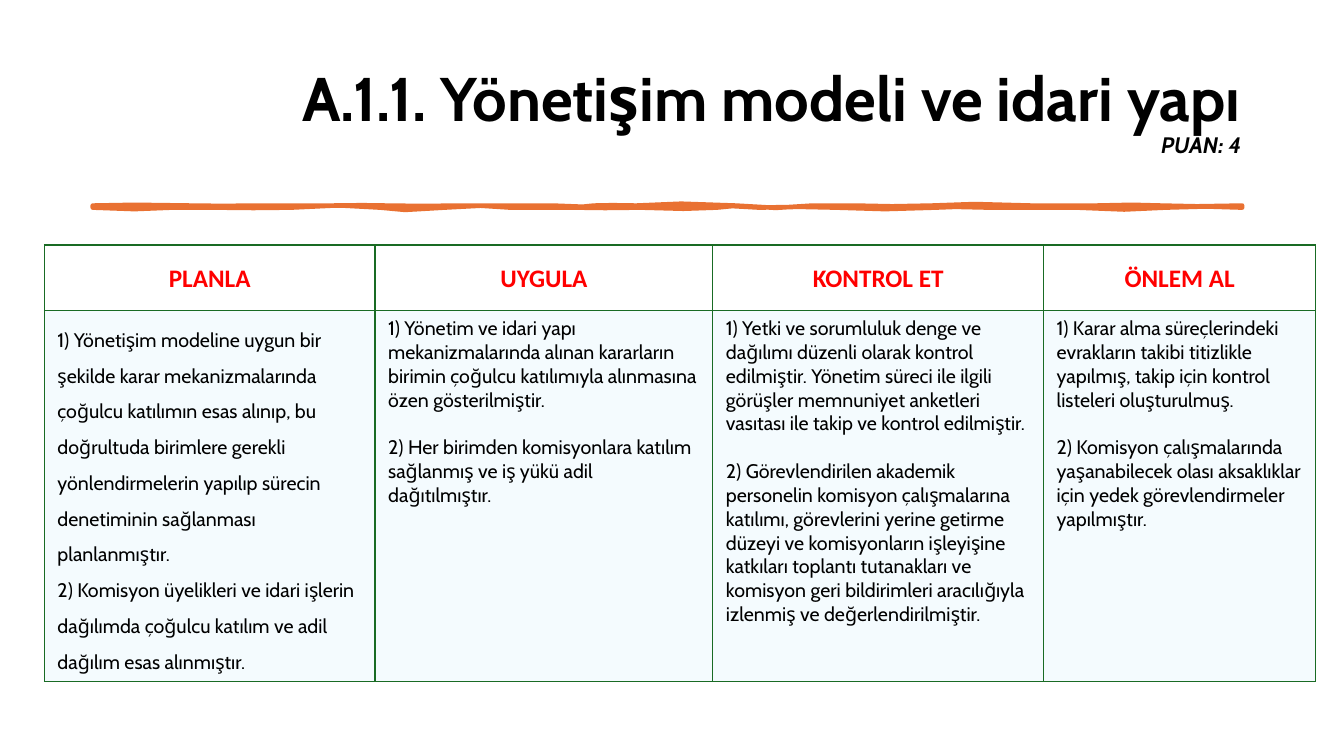
from dataclasses import dataclass

from lxml.etree import SubElement
from pptx import Presentation
from pptx.dml.color import RGBColor
from pptx.enum.text import MSO_ANCHOR, PP_ALIGN
from pptx.oxml.ns import qn
from pptx.util import Pt

# Content
TITLE = "A.1.1. Yönetişim modeli ve idari yapı"
SCORE = "PUAN: 4"
STAGES = [
    ("PLANLA", [
        "1) Yönetişim modeline uygun bir şekilde karar mekanizmalarında çoğulcu katılımın esas alınıp, "
        "bu doğrultuda birimlere gerekli yönlendirmelerin yapılıp sürecin denetiminin sağlanması "
        "planlanmıştır.",
        "2) Komisyon üyelikleri ve idari işlerin dağılımda çoğulcu katılım ve adil dağılım esas "
        "alınmıştır."]),
    ("UYGULA", [
        "1) Yönetim ve idari yapı mekanizmalarında alınan kararların birimin çoğulcu katılımıyla "
        "alınmasına özen gösterilmiştir.",
        "2) Her birimden komisyonlara katılım sağlanmış ve iş yükü adil dağıtılmıştır."]),
    ("KONTROL ET", [
        "1) Yetki ve sorumluluk denge ve dağılımı düzenli olarak kontrol edilmiştir. Yönetim süreci "
        "ile ilgili görüşler memnuniyet anketleri vasıtası ile takip ve kontrol edilmiştir.",
        "2) Görevlendirilen akademik personelin komisyon çalışmalarına katılımı, görevlerini yerine "
        "getirme düzeyi ve komisyonların işleyişine katkıları toplantı tutanakları ve komisyon geri "
        "bildirimleri aracılığıyla izlenmiş ve değerlendirilmiştir."]),
    ("ÖNLEM AL", [
        "1) Karar alma süreçlerindeki evrakların takibi titizlikle yapılmış, takip için kontrol "
        "listeleri oluşturulmuş.",
        "2) Komisyon çalışmalarında yaşanabilecek olası aksaklıklar için yedek görevlendirmeler "
        "yapılmıştır."]),
]

# Layout in px, 100 to the inch
PX = 9144
SLIDE = (1333, 750)
TITLE_BOX = (91, 40, 1150, 145)
TABLE_LEFT, TABLE_TOP = 44, 243
COLUMNS = (328, 335, 328, 270)
ROWS = (65, 368)
HEADER_INSETS = (5, 0, 5, 0)
BODY_INSETS = (13, 6, 13, 6)

# Brush stroke: each wave is (control x, control y, control x, control y, end x)
STROKE_LEFT, STROKE_TOP, STROKE_BOTTOM = 92, 204, 206
TOP_WAVES = [
    (119, 204, 144, 202, 190), (237, 206, 220, 203, 244), (267, 205, 303, 203, 331),
    (360, 205, 359, 202, 384), (410, 206, 423, 203, 460), (498, 205, 514, 203, 548),
    (581, 205, 581, 206, 589), (598, 202, 615, 205, 631), (647, 203, 701, 200, 730),
    (759, 208, 781, 206, 806), (831, 202, 827, 206, 848), (868, 202, 901, 208, 924),
    (947, 200, 982, 204, 1023), (1063, 204, 1063, 204, 1087), (1112, 204, 1136, 202, 1152),
    (1168, 206, 1203, 204, 1232),
]
BOTTOM_WAVES = [
    (1205, 206, 1189, 203, 1156), (1122, 209, 1110, 208, 1068), (1027, 204, 1023, 208, 981),
    (939, 204, 952, 206, 928), (904, 206, 851, 210, 829), (806, 202, 782, 208, 753),
    (724, 204, 725, 204, 711), (698, 208, 661, 207, 635), (609, 205, 590, 208, 570),
    (551, 204, 528, 208, 506), (483, 204, 473, 203, 441), (409, 209, 390, 209, 377),
    (363, 203, 310, 203, 289), (268, 209, 235, 204, 213), (192, 208, 189, 204, 171),
    (154, 208, 114, 208, 92),
]
STEPS = 2


@dataclass(frozen=True)
class Theme:
    text_font: str = "Cabin"
    header_font: str = "Calibri"
    text: str = "000000"
    header: str = "FF0000"
    stroke: str = "E97132"
    border: str = "196B24"
    cell: str = "CAEEFB"
    cell_opacity: int = 20
    title_size: int = 44
    score_size: int = 16
    header_size: int = 18
    body_size: int = 14
    stroke_width: float = 3.25
    border_width: int = 1
    item_gap: int = 17


THEME = Theme()


def px(*lengths):
    return [length * PX for length in lengths]


def add_run(paragraph, text, font, size, color, bold=False, italic=False):
    run = paragraph.add_run()
    run.text = text
    run.font.name = font
    run.font.size = Pt(size)
    run.font.bold = bold
    run.font.italic = italic
    run.font.color.rgb = RGBColor.from_string(color)


def add_title(slide):
    frame = slide.shapes.add_textbox(*px(*TITLE_BOX)).text_frame
    frame.word_wrap = True
    frame.vertical_anchor = MSO_ANCHOR.MIDDLE
    paragraph = frame.paragraphs[0]
    paragraph.alignment = PP_ALIGN.RIGHT
    paragraph.line_spacing = 0.9
    add_run(paragraph, TITLE, THEME.text_font, THEME.title_size, THEME.text, bold=True)
    paragraph.add_line_break()
    add_run(paragraph, SCORE, THEME.text_font, THEME.score_size, THEME.text, bold=True, italic=True)


def wave_points(start, level, waves):
    points = []
    for x1, y1, x2, y2, end in waves:
        for step in range(1, STEPS + 1):
            t = step / STEPS
            weights = ((1 - t) ** 3, 3 * t * (1 - t) ** 2, 3 * t * t * (1 - t), t ** 3)
            x = sum(w * v for w, v in zip(weights, (start, x1, x2, end)))
            y = sum(w * v for w, v in zip(weights, (level, y1, y2, level)))
            points.append((round(x * PX), round(y * PX)))
        start = end
    return points


def add_stroke(slide):
    right = TOP_WAVES[-1][-1]
    builder = slide.shapes.build_freeform(*px(STROKE_LEFT, STROKE_TOP))
    builder.add_line_segments(
        wave_points(STROKE_LEFT, STROKE_TOP, TOP_WAVES)
        + [tuple(px(right, STROKE_BOTTOM))]
        + wave_points(right, STROKE_BOTTOM, BOTTOM_WAVES), close=True)
    shape = builder.convert_to_shape()
    shape.shadow.inherit = False
    shape.fill.solid()
    shape.fill.fore_color.rgb = RGBColor.from_string(THEME.stroke)
    shape.line.color.rgb = RGBColor.from_string(THEME.stroke)
    shape.line.width = Pt(THEME.stroke_width)


def set_borders(cell):
    properties = cell._tc.get_or_add_tcPr()
    for tag in ("a:lnL", "a:lnR", "a:lnT", "a:lnB"):
        line = SubElement(properties, qn(tag), w=str(Pt(THEME.border_width)))
        SubElement(SubElement(line, qn("a:solidFill")), qn("a:srgbClr"), val=THEME.border)


def set_insets(cell, insets):
    cell.margin_left, cell.margin_top, cell.margin_right, cell.margin_bottom = px(*insets)


def fill_header(cell, heading):
    set_insets(cell, HEADER_INSETS)
    set_borders(cell)
    cell.fill.background()
    cell.vertical_anchor = MSO_ANCHOR.MIDDLE
    paragraph = cell.text_frame.paragraphs[0]
    paragraph.alignment = PP_ALIGN.CENTER
    paragraph.line_spacing = 1.07
    paragraph.space_after = Pt(8)
    add_run(paragraph, heading, THEME.header_font, THEME.header_size, THEME.header, bold=True)


def fill_body(cell, items, line_spacing, gap):
    set_insets(cell, BODY_INSETS)
    set_borders(cell)
    cell.fill.solid()
    cell.fill.fore_color.rgb = RGBColor.from_string(THEME.cell)
    color = cell._tc.tcPr.find(qn("a:solidFill")).find(qn("a:srgbClr"))
    SubElement(color, qn("a:alpha"), val=str(THEME.cell_opacity * 1000))
    frame = cell.text_frame
    for index, item in enumerate(items):
        paragraph = frame.add_paragraph() if index else frame.paragraphs[0]
        paragraph.line_spacing = line_spacing
        paragraph.space_before = Pt(gap if index else 0)
        add_run(paragraph, item, THEME.text_font, THEME.body_size, THEME.text)


def add_stage_table(slide):
    frame = slide.shapes.add_table(
        len(ROWS), len(COLUMNS), *px(TABLE_LEFT, TABLE_TOP, sum(COLUMNS), sum(ROWS)))
    table = frame.table
    table.first_row = table.horz_banding = False
    for row, height in zip(table.rows, ROWS):
        row.height = height * PX
    for index, (heading, items) in enumerate(STAGES):
        table.columns[index].width = COLUMNS[index] * PX
        fill_header(table.cell(0, index), heading)
        # The first stage is set in open lines, the others with a gap between items
        line_spacing, gap = (1.0, THEME.item_gap) if index else (1.5, 0)
        fill_body(table.cell(1, index), items, line_spacing, gap)


def main():
    presentation = Presentation()
    presentation.slide_width, presentation.slide_height = px(*SLIDE)
    slide = presentation.slides.add_slide(presentation.slide_layouts[6])
    add_title(slide)
    add_stroke(slide)
    add_stage_table(slide)
    presentation.save("out.pptx")


if __name__ == "__main__":
    main()
